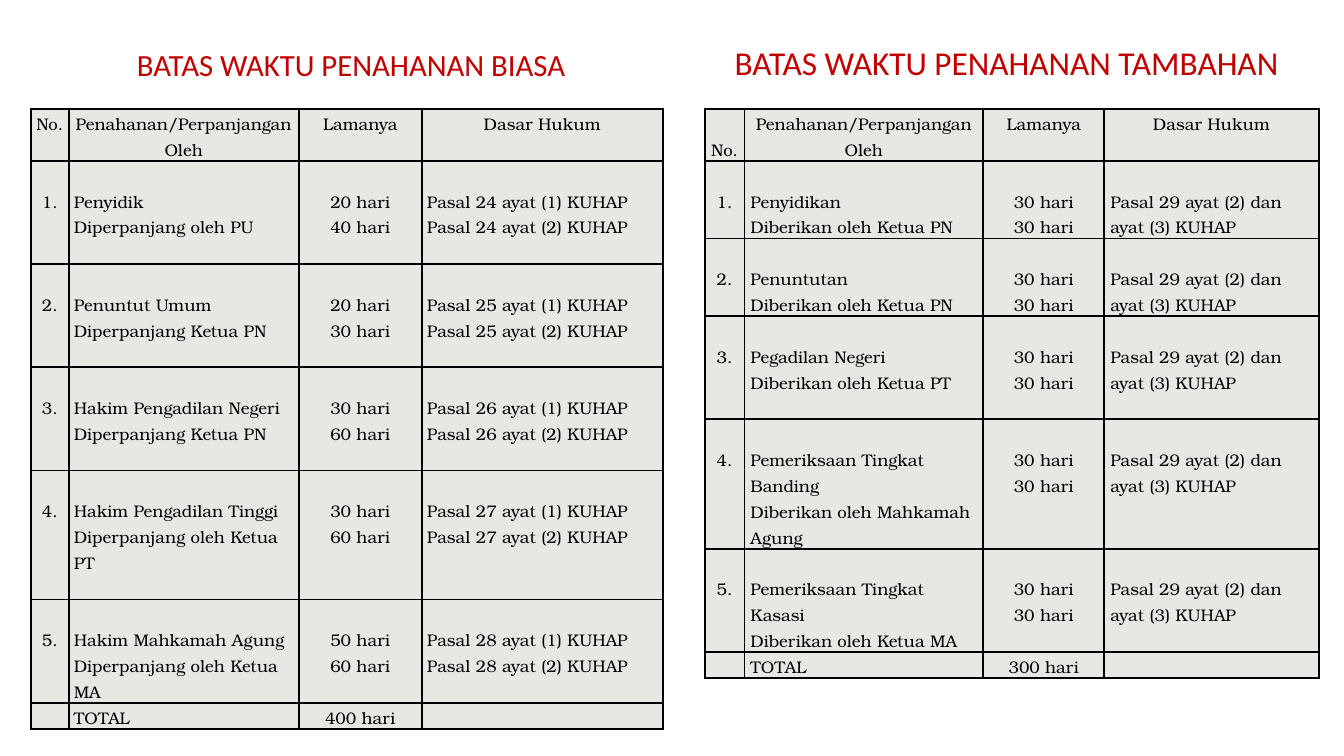
"""Build a slide with two tables of detention time limits."""
import lxml.etree
import pptx
import pptx.dml.color
import pptx.enum.text
import pptx.oxml.ns
import pptx.util

Cm = pptx.util.Cm
Pt = pptx.util.Pt
ALIGN = pptx.enum.text.PP_ALIGN
ANCHOR = pptx.enum.text.MSO_ANCHOR
qn = pptx.oxml.ns.qn

HEAD = ("No.", "Penahanan/Perpanjangan Oleh", "Lamanya", "Dasar Hukum")
EXTRA = "Pasal 29 ayat (2) dan ayat (3) KUHAP"
USUAL = [
    ("Penyidik\nDiperpanjang oleh PU", (20, 40)),
    ("Penuntut Umum\nDiperpanjang Ketua PN", (20, 30)),
    ("Hakim Pengadilan Negeri\nDiperpanjang Ketua PN", (30, 60)),
    ("Hakim Pengadilan Tinggi\nDiperpanjang oleh Ketua PT", (30, 60)),
    ("Hakim Mahkamah Agung\nDiperpanjang oleh Ketua MA", (50, 60)),
]
ADDED = [
    ("Penyidikan\nDiberikan oleh Ketua PN", (30, 30)),
    ("Penuntutan\nDiberikan oleh Ketua PN", (30, 30)),
    ("Pegadilan Negeri\nDiberikan oleh Ketua PT", (30, 30)),
    ("Pemeriksaan Tingkat Banding\nDiberikan oleh Mahkamah Agung", (30, 30)),
    ("Pemeriksaan Tingkat Kasasi\nDiberikan oleh Ketua MA", (30, 30)),
]
BASIS = [f"Pasal {n} ayat (1) KUHAP\nPasal {n} ayat (2) KUHAP"
         for n in range(24, 29)]
SIDES = [
    dict(title="BATAS WAKTU PENAHANAN BIASA", size=22, space=1.1, text=0.99,
         left=0.78, cols=(0.95, 5.8, 3.1, 6.07), lines=(2, 4, 4, 4, 5, 4, 1),
         inset=0.13, stages=USUAL, basis=BASIS, first=ANCHOR.TOP),
    dict(title="BATAS WAKTU PENAHANAN TAMBAHAN", size=23.8, space=1, text=17.5,
         left=17.76, cols=(1, 6.02, 3.05, 5.4), lines=(2, 3, 3, 4, 5, 4, 1),
         inset=0.15, stages=ADDED, basis=[EXTRA] * 5, first=ANCHOR.BOTTOM),
]
LINE = 0.65
TOP = 2.75
FONT = "TeX Gyre Bonum"


def color(code):
    return pptx.dml.color.RGBColor.from_string(code)


def style(para, font, size, code, space, align):
    para.alignment = align
    para.line_spacing = space
    for run in para.runs:
        run.font.name = font
        run.font.size = Pt(size)
        run.font.color.rgb = color(code)


def put_title(shape, side):
    shape.left, shape.top = Cm(side["text"]), Cm(0.94)
    shape.width, shape.height = Cm(15.72), Cm(1.27)
    frame = shape.text_frame
    frame.text = side["title"]
    frame.word_wrap = True
    frame.auto_size = pptx.enum.text.MSO_AUTO_SIZE.NONE
    frame.vertical_anchor = ANCHOR.TOP
    style(frame.paragraphs[0], "Calibri", side["size"], "C00000",
          side["space"], ALIGN.CENTER)


def border(cell):
    props = cell._tc.get_or_add_tcPr()
    for tag in ("a:lnL", "a:lnR", "a:lnT", "a:lnB"):
        line = lxml.etree.SubElement(props, qn(tag), w=str(Pt(1.5)))
        fill = lxml.etree.SubElement(line, qn("a:solidFill"))
        lxml.etree.SubElement(fill, qn("a:srgbClr"), val="000000")


def fill_cell(cell, text, align, inset, top):
    border(cell)
    cell.fill.solid()
    cell.fill.fore_color.rgb = color("E9E7E4")
    cell.margin_left = cell.margin_right = Cm(inset)
    cell.margin_top, cell.margin_bottom = Cm(top), 0
    cell.text_frame.text = text
    for para in cell.text_frame.paragraphs:
        style(para, FONT, 12, "000000", 1.15, align)
        if not text:
            lxml.etree.SubElement(para._p, qn("a:endParaRPr"), sz="1200")


def put_table(slide, side):
    rows = [HEAD]
    total = 0
    for num, (stage, days) in enumerate(side["stages"], 1):
        terms = "\n".join(f"{day} hari" for day in days)
        rows.append((f"{num}.", stage, terms, side["basis"][num - 1]))
        total += sum(days)
    rows.append(("", "TOTAL", f"{total} hari", ""))

    cols, lines = side["cols"], side["lines"]
    frame = slide.shapes.add_table(
        len(rows), len(cols), Cm(side["left"]), Cm(TOP),
        Cm(sum(cols)), Cm(LINE * sum(lines)))
    table = frame.table
    table.first_row = table.horz_banding = False
    for col, width in zip(table.columns, cols):
        col.width = Cm(width)
    for r, row in enumerate(rows):
        table.rows[r].height = Cm(LINE * lines[r])
        gap = LINE if 0 < r < len(rows) - 1 else 0
        for c, text in enumerate(row):
            mid = r == 0 or c in (0, 2)
            align = ALIGN.CENTER if mid else ALIGN.LEFT
            fill_cell(table.cell(r, c), text, align, side["inset"], gap)
    table.cell(0, 0).vertical_anchor = side["first"]


def main():
    deck = pptx.Presentation()
    deck.slide_width, deck.slide_height = Cm(33.87), Cm(19.05)
    slide = deck.slides.add_slide(deck.slide_layouts[5])
    heads = (slide.shapes.title, slide.shapes.add_textbox(0, 0, 0, 0))
    for head, side in zip(heads, SIDES):
        put_title(head, side)
        put_table(slide, side)
    deck.save("out.pptx")


if __name__ == "__main__":
    main()
